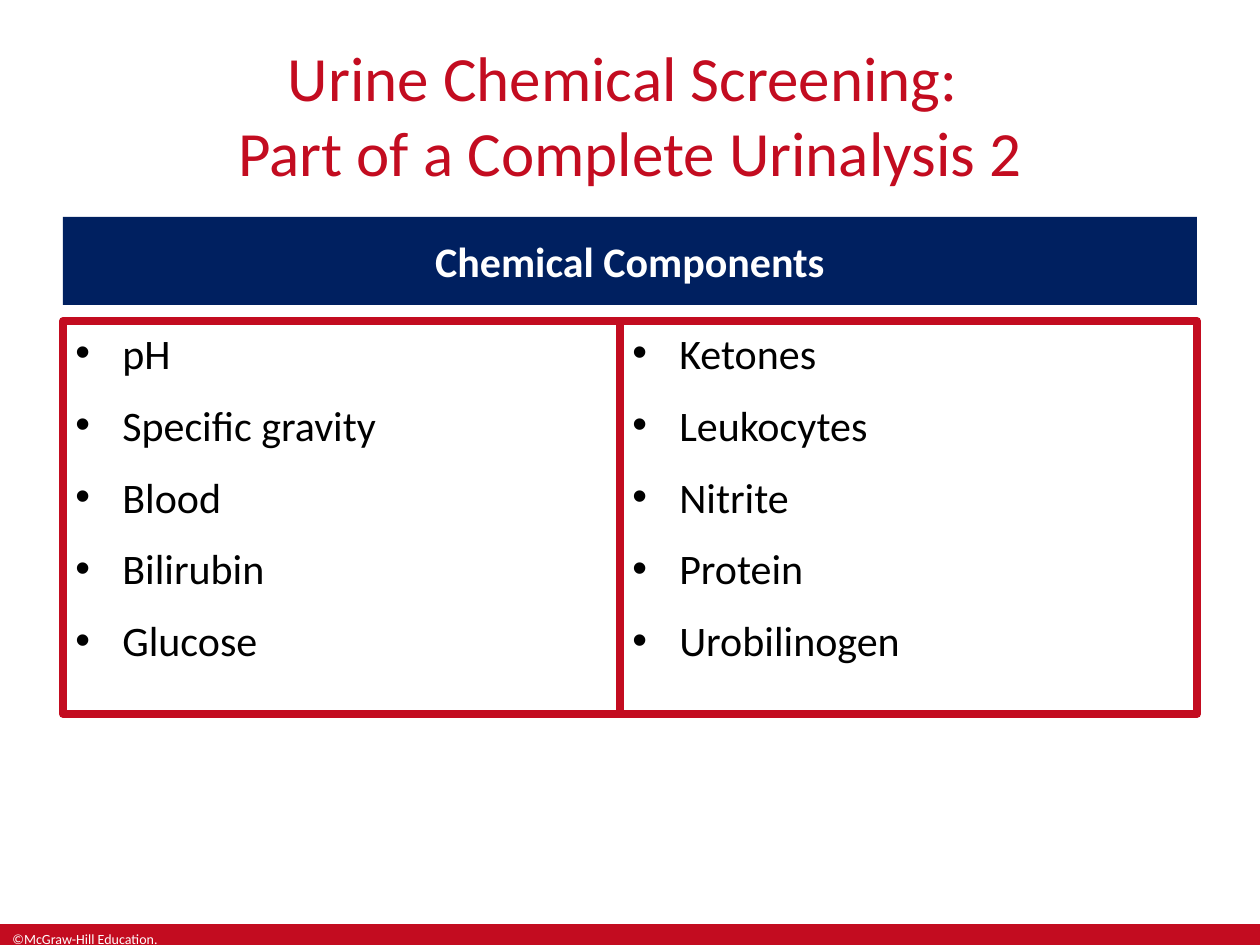
from dataclasses import dataclass

from lxml import etree
from pptx import Presentation
from pptx.dml.color import RGBColor
from pptx.enum.shapes import MSO_SHAPE
from pptx.enum.text import MSO_ANCHOR, PP_ALIGN
from pptx.oxml.ns import qn
from pptx.util import Emu, Pt

RECT = MSO_SHAPE.RECTANGLE
TOP, MIDDLE = MSO_ANCHOR.TOP, MSO_ANCHOR.MIDDLE
LEFT, CENTER = PP_ALIGN.LEFT, PP_ALIGN.CENTER

RED = RGBColor(0xC3, 0x0C, 0x20)
NAVY = RGBColor(0x00, 0x20, 0x60)
WHITE = RGBColor(0xFF, 0xFF, 0xFF)
BLACK = RGBColor(0x00, 0x00, 0x00)
FONT = "Calibri"
INDENT = 47


def px(n: int) -> Emu:
    return Emu(round(n * 914400 / 126))


@dataclass
class Box:
    x: int
    y: int
    w: int
    h: int

    def place(self) -> tuple:
        return px(self.x), px(self.y), px(self.w), px(self.h)


@dataclass
class Style:
    size: int
    color: RGBColor
    align: PP_ALIGN = LEFT
    bold: bool = False


@dataclass
class Panel:
    box: Box
    items: list[str]


def style_para(para, style: Style) -> None:
    para.alignment = style.align
    for run in para.runs:
        font = run.font
        font.name, font.size, font.bold = FONT, Pt(style.size), style.bold
        font.color.rgb = style.color


def add_text(slide, box: Box, text: str, style: Style) -> None:
    frame = slide.shapes.add_textbox(*box.place()).text_frame
    frame.word_wrap = True
    frame.text = text
    style_para(frame.paragraphs[0], style)


def add_rect(slide, box: Box, fill: RGBColor | None = None):
    shape = slide.shapes.add_shape(RECT, *box.place())
    shape.shadow.inherit = False
    if fill is None:
        shape.fill.background()
        shape.line.color.rgb = RED
        shape.line.width = Pt(4.5)
    else:
        shape.fill.solid()
        shape.fill.fore_color.rgb = fill
        shape.line.fill.background()
    return shape


def add_bullet(para) -> None:
    props = para._p.get_or_add_pPr()
    props.set("marL", str(px(INDENT)))
    props.set("indent", str(-px(INDENT)))
    etree.SubElement(props, qn("a:buFont")).set("typeface", "Arial")
    etree.SubElement(props, qn("a:buChar")).set("char", "•")


def add_panel(slide, panel: Panel, style: Style) -> None:
    frame = add_rect(slide, panel.box).text_frame
    frame.vertical_anchor = TOP
    frame.text = "\n".join(panel.items)
    for i, para in enumerate(frame.paragraphs):
        add_bullet(para)
        para.space_before = Pt(4.3 if i else 0)
        para.space_after = Pt(8)
        style_para(para, style)


def main() -> None:
    deck = Presentation()
    deck.slide_width, deck.slide_height = px(1260), px(945)
    slide = deck.slides.add_slide(deck.slide_layouts[6])

    # Footer band
    add_rect(slide, Box(0, 924, 1260, 21), RED)
    add_text(slide, Box(0, 924, 189, 21), "©McGraw-Hill Education.", Style(8, WHITE))

    # Title
    title = "Urine Chemical Screening: \vPart of a Complete Urinalysis 2"
    add_text(slide, Box(-3, 32, 1266, 158), title, Style(36, RED, CENTER))

    # Heading bar
    head = add_rect(slide, Box(63, 217, 1134, 88), NAVY).text_frame
    head.vertical_anchor = MIDDLE
    head.text = "Chemical Components"
    style_para(head.paragraphs[0], Style(24, WHITE, CENTER, True))

    # Two lists side by side
    panels = [
        Panel(Box(63, 321, 557, 393),
              ["pH", "Specific gravity", "Blood", "Bilirubin", "Glucose"]),
        Panel(Box(620, 321, 577, 393),
              ["Ketones", "Leukocytes", "Nitrite", "Protein", "Urobilinogen"]),
    ]
    for panel in panels:
        add_panel(slide, panel, Style(24, BLACK))

    deck.save("out.pptx")


if __name__ == "__main__":
    main()
